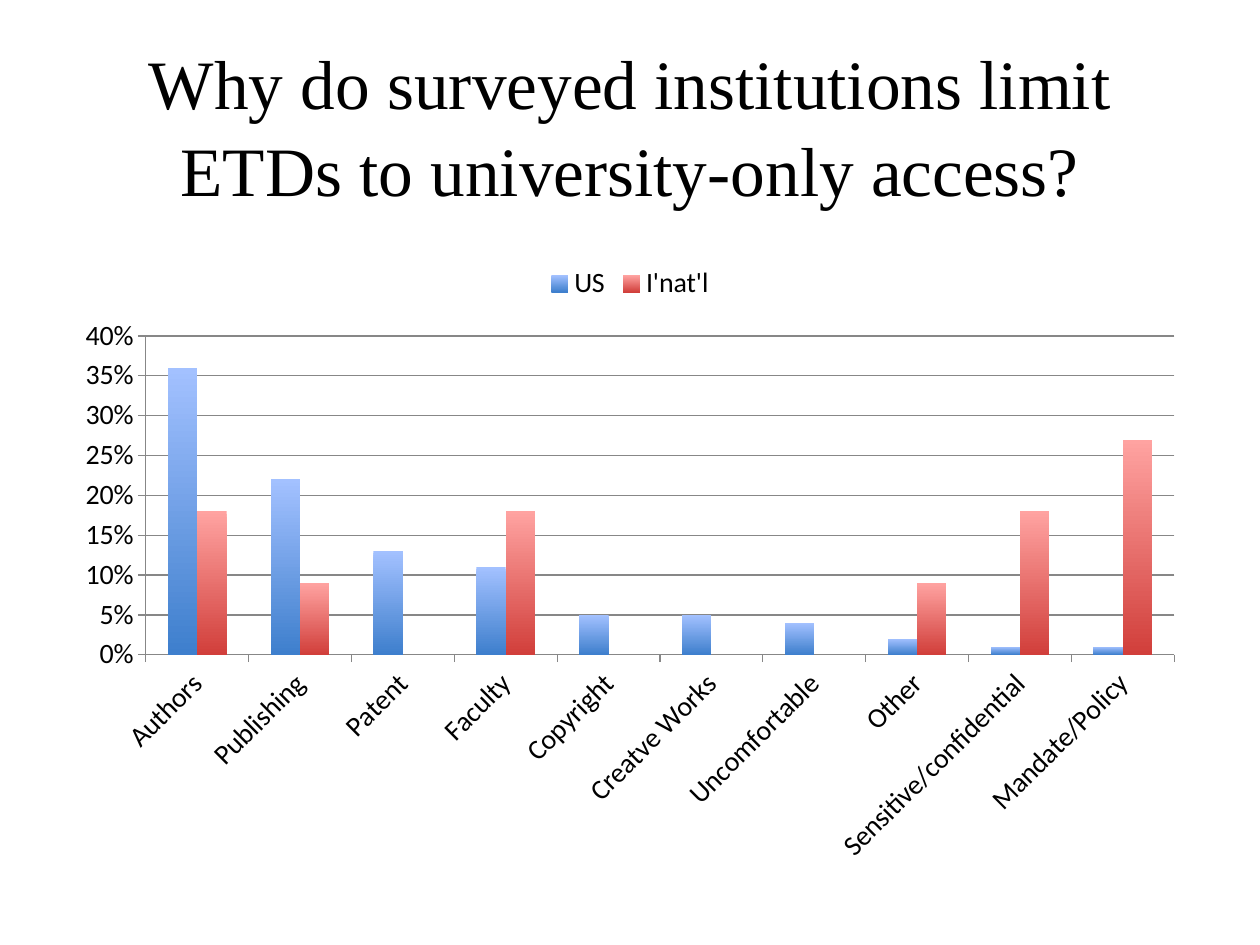
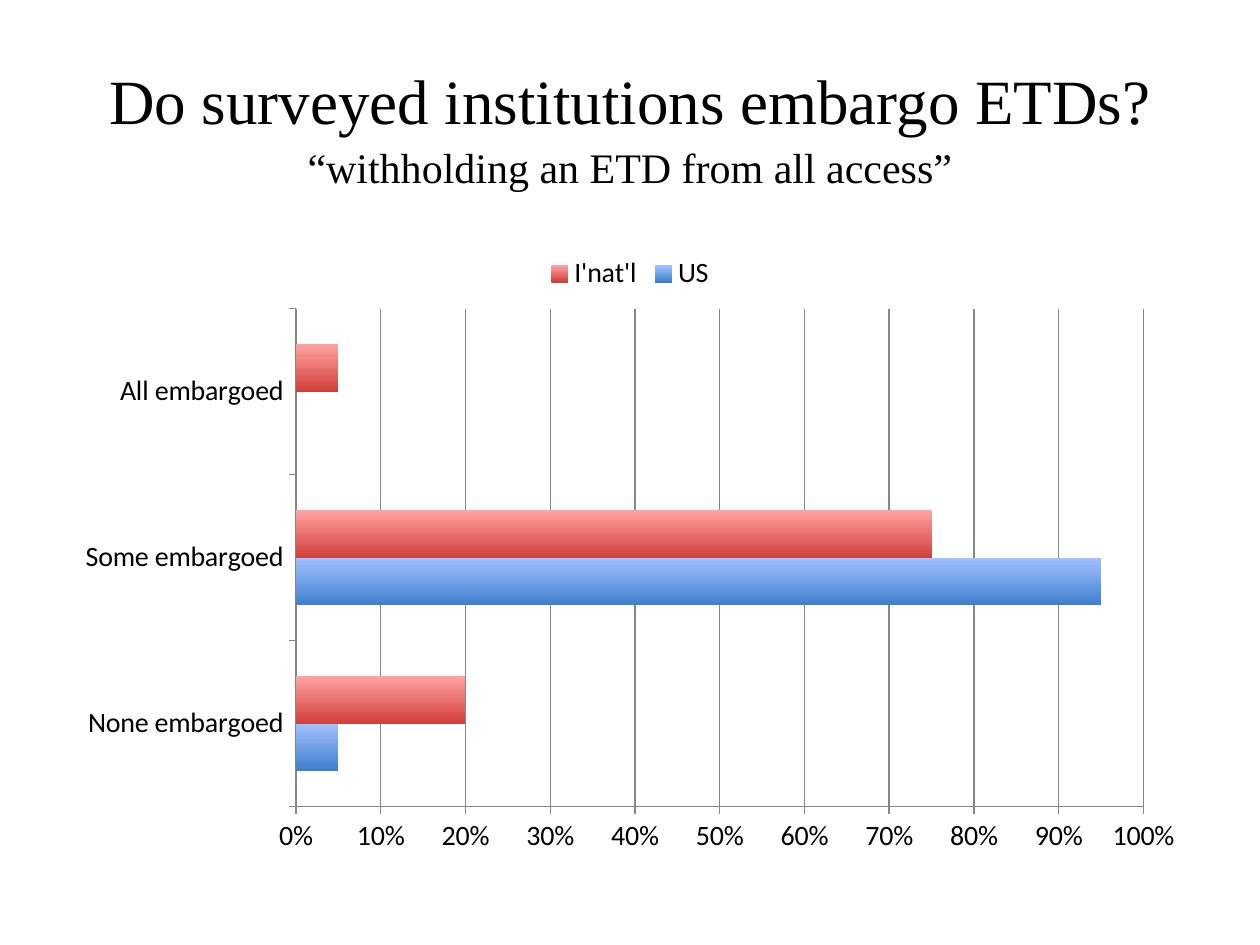
from pptx import Presentation
from pptx.chart.data import CategoryChartData
from pptx.dml.color import RGBColor
from pptx.enum.chart import XL_CHART_TYPE, XL_LEGEND_POSITION, XL_TICK_MARK
from pptx.enum.text import MSO_ANCHOR, PP_ALIGN
from pptx.util import Inches, Pt

SLIDES = [
    {
        "title": [("Why do surveyed institutions limit ETDs to university-only access?", 39.6)],
        "pitch": 1.05,
        "top": 2,
        "kind": XL_CHART_TYPE.COLUMN_CLUSTERED,
        "groups": ["Authors", "Publishing", "Patent", "Faculty", "Copyright",
                   "Creatve Works", "Uncomfortable", "Other",
                   "Sensitive/confidential", "Mandate/Policy"],
        "US": [0.36, 0.22, 0.13, 0.11, 0.05, 0.05, 0.04, 0.02, 0.01, 0.01],
        "I'nat'l": [0.18, 0.09, 0, 0.18, 0, 0, 0, 0.09, 0.18, 0.27],
        "scale": {"minimum_scale": 0, "maximum_scale": 0.4, "major_unit": 0.05},
        "turn": -45,
    },
    {
        "title": [("Do surveyed institutions embargo ETDs?", 36),
                  ("“withholding an ETD from all access”", 24)],
        "pitch": 1.1,
        "top": 1.92,
        "kind": XL_CHART_TYPE.BAR_CLUSTERED,
        "groups": ["None embargoed", "Some embargoed", "All embargoed"],
        "US": [0.05, 0.95, 0],
        "I'nat'l": [0.2, 0.75, 0.05],
        "scale": {"minimum_scale": 0, "maximum_scale": 1, "major_unit": 0.1},
        "turn": 0,
    },
]

SHADES = {"US": ("A3C1FF", "3E7FCD"), "I'nat'l": ("FFA3A1", "D13F3B")}
INK, RULE = "000000", "878787"
LEFT, WIDTH = Inches(0.5), Inches(9)
FRAME = {"word_wrap": True, "vertical_anchor": MSO_ANCHOR.MIDDLE}
LEGEND = {"position": XL_LEGEND_POSITION.TOP, "include_in_layout": False}
PLOT = {"gap_width": 150, "overlap": 0, "vary_by_categories": False}
TICKS = {"major_tick_mark": XL_TICK_MARK.OUTSIDE, "minor_tick_mark": XL_TICK_MARK.NONE}
LABELS = {"number_format": "0%", "number_format_is_linked": False}


def tint(code):
    return RGBColor.from_string(code)


def apply(part, values):
    for name, value in values.items():
        setattr(part, name, value)


def style(font, face, size):
    apply(font, {"name": face, "size": Pt(size)})
    font.color.rgb = tint(INK)


def rule(line):
    line.color.rgb = tint(RULE)
    line.width = Pt(0.75)


def add_title(slide, lines, pitch):
    frame = slide.shapes.add_textbox(LEFT, Inches(0.35), WIDTH, Inches(1.25)).text_frame
    apply(frame, FRAME)
    para = frame.paragraphs[0]
    apply(para, {"alignment": PP_ALIGN.CENTER, "line_spacing": pitch})
    for place, (words, size) in enumerate(lines):
        if place:
            para.add_line_break()
        run = para.add_run()
        run.text = words
        style(run.font, "Times New Roman", size)


def add_graph(slide, item):
    data = CategoryChartData(number_format="0%")
    data.categories = item["groups"]
    for name in SHADES:
        data.add_series(name, item[name])
    chart = slide.shapes.add_chart(item["kind"], LEFT, Inches(item["top"]),
                                   WIDTH, Inches(4.95), data).chart
    apply(chart, {"has_title": False, "has_legend": True})
    apply(chart.legend, LEGEND)
    style(chart.font, "Calibri", 16)
    plot = chart.plots[0]
    apply(plot, PLOT)
    for series in plot.series:
        fill = series.format.fill
        fill.gradient()
        fill.gradient_angle = 270
        for stop, code in zip(fill.gradient_stops, SHADES[series.name]):
            stop.color.rgb = tint(code)

    group, value = chart.category_axis, chart.value_axis
    for axis in (group, value):
        apply(axis, TICKS)
        rule(axis.format.line)
        style(axis.tick_labels.font, "Calibri", 16)
    apply(value, item["scale"])
    apply(value.tick_labels, LABELS)
    value.has_major_gridlines = True
    rule(value.major_gridlines.format.line)
    group.has_major_gridlines = False
    body = group._element.xpath("c:txPr/a:bodyPr")[0]
    body.set("rot", str(item["turn"] * 60000))


def main():
    deck = Presentation()
    apply(deck, {"slide_width": Inches(10), "slide_height": Inches(7.5)})
    for item in SLIDES:
        slide = deck.slides.add_slide(deck.slide_layouts[6])
        add_title(slide, item["title"], item["pitch"])
        add_graph(slide, item)
    deck.save("out.pptx")


if __name__ == "__main__":
    main()
